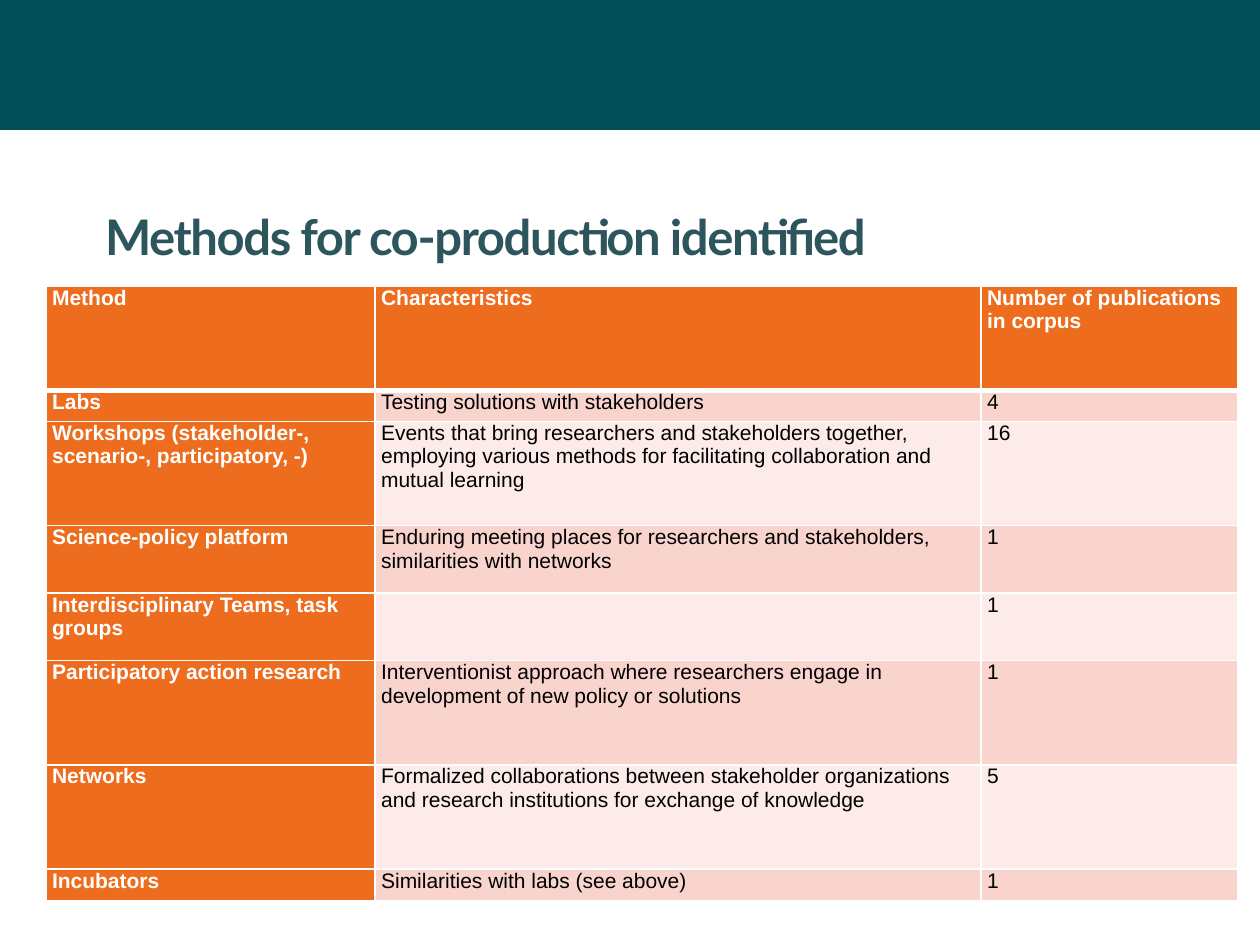
import pptx
import pptx.util
import pptx.dml.color
import pptx.enum.shapes
import pptx.enum.text
import pptx.oxml
import pptx.oxml.ns

Pt = pptx.util.Pt
COLORS = {"band": "004E57", "title": "2D555C", "accent": "ED6C1E", "dark_row": "F8D4CD",
          "light_row": "FCEBE8", "white": "FFFFFF", "black": "000000"}
COLUMN_WIDTHS = [188, 346.3, 146.9]
# Each row: height, method, characteristics, number of publications
ROWS = [
    (59.6, "Method", "Characteristics", "Number of publications\vin corpus"),
    (17.8, "Labs", "Testing solutions with stakeholders", "4"),
    (59.6, "Workshops (stakeholder-, scenario-, participatory, -)",
     "Events that bring researchers and stakeholders together, employing various methods "
     "for facilitating collaboration and mutual learning", "16"),
    (38.6, "Science-policy platform",
     "Enduring meeting places for researchers and stakeholders, similarities with networks", "1"),
    (38.6, "Interdisciplinary Teams, task groups", "", "1"),
    (59.6, "Participatory action research",
     "Interventionist approach where researchers engage in development of new policy or solutions",
     "1"),
    (59.6, "Networks",
     "Formalized collaborations between stakeholder organizations and research institutions "
     "for exchange of knowledge", "5"),
    (17.8, "Incubators", "Similarities with labs (see above)", "1"),
]


def rgb(name):
    return pptx.dml.color.RGBColor.from_string(COLORS[name])


def style_font(font, name, size, color, bold):
    font.name, font.size, font.bold = name, Pt(size), bold
    font.color.rgb = rgb(color)


def add_band(slide, x, y, w, h):
    sp = slide.shapes.add_shape(pptx.enum.shapes.MSO_SHAPE.RECTANGLE, Pt(x), Pt(y), Pt(w), Pt(h))
    sp.shadow.inherit = False
    sp.fill.solid()
    sp.fill.fore_color.rgb = rgb("band")
    sp.line.fill.background()


def add_title(slide, x, y, w, h):
    tf = slide.shapes.add_textbox(Pt(x), Pt(y), Pt(w), Pt(h)).text_frame
    tf.word_wrap = True
    tf.vertical_anchor = pptx.enum.text.MSO_ANCHOR.MIDDLE
    tf.margin_left = tf.margin_right = tf.margin_top = tf.margin_bottom = 0
    p = tf.paragraphs[0]
    r = p.add_run()
    r.text = "Methods for co-production identified"
    style_font(r.font, "Lato", 28, "title", True)
    r.font._element.set("spc", "-80")


def set_borders(cell, top, bottom):
    """Draw white cell borders, with top and bottom widths in points."""
    tc_pr = cell._tc.get_or_add_tcPr()
    sides = [("lnL", 1), ("lnR", 1), ("lnT", top), ("lnB", bottom)]
    for i, (tag, width) in enumerate(sides):
        tc_pr.insert(i, pptx.oxml.parse_xml(
            f'<a:{tag} {pptx.oxml.ns.nsdecls("a")} w="{Pt(width)}"><a:solidFill>'
            f'<a:srgbClr val="{COLORS["white"]}"/></a:solidFill></a:{tag}>'))


def add_methods_table(slide, x, y, w, h):
    table = slide.shapes.add_table(len(ROWS), len(COLUMN_WIDTHS),
                                   Pt(x), Pt(y), Pt(w), Pt(h)).table
    table.first_col = True
    for column, width in zip(table.columns, COLUMN_WIDTHS):
        column.width = Pt(width)
    for i, (height, *texts) in enumerate(ROWS):
        table.rows[i].height = Pt(height)
        for j, text in enumerate(texts):
            cell = table.cell(i, j)
            heading = i == 0 or j == 0
            cell.margin_left = cell.margin_right = Pt(3.6)
            cell.margin_top = cell.margin_bottom = 0
            cell.fill.solid()
            cell.fill.fore_color.rgb = rgb(
                "accent" if heading else "dark_row" if i % 2 else "light_row")
            set_borders(cell, 3 if i == 1 else 1, 3 if i == 0 else 1)
            p = cell.text_frame.paragraphs[0]
            p.text = text
            style_font(p.font, "Arial", 12, "white" if heading else "black", heading)


def main():
    prs = pptx.Presentation()
    prs.slide_width, prs.slide_height = Pt(720), Pt(540)
    slide = prs.slides.add_slide(prs.slide_layouts[6])
    add_band(slide, 0, 0, 720, 74.2)
    add_title(slide, 60, 97.2, 612.7, 75.6)
    add_methods_table(slide, 26.2, 163.4, sum(COLUMN_WIDTHS), sum(row[0] for row in ROWS))
    prs.save("out.pptx")


if __name__ == "__main__":
    main()
